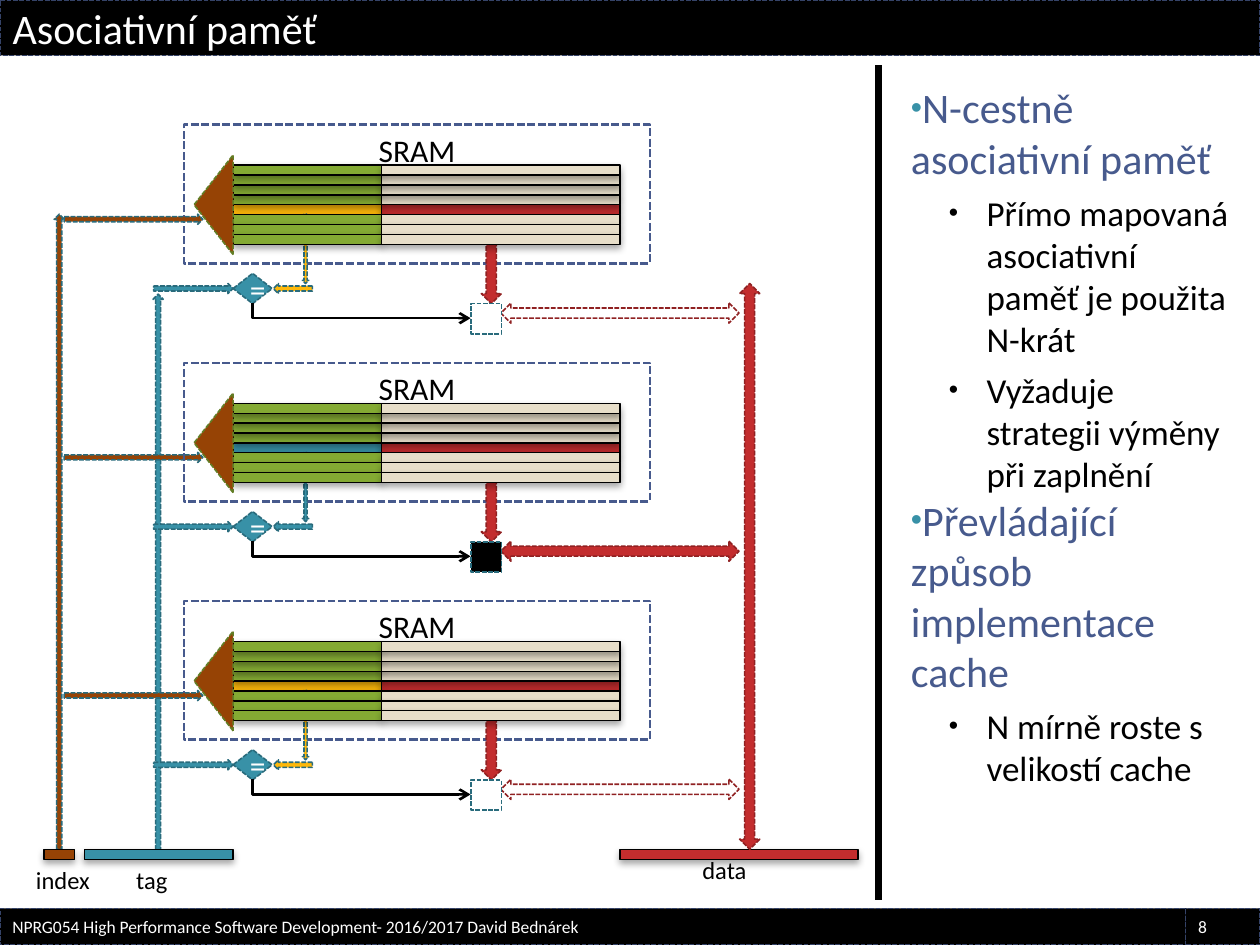
"""Build the slide on N-way associative memory."""
from lxml import etree
from pptx import Presentation
from pptx.dml.color import RGBColor
from pptx.enum import dml, shapes, text
from pptx.oxml import ns
from pptx.util import Inches, Pt

BLACK = RGBColor(0x00, 0x00, 0x00)
WHITE = RGBColor(0xFF, 0xFF, 0xFF)
TEAL = RGBColor(0x38, 0x91, 0xA7)
DARK_TEAL = RGBColor(0x29, 0x6B, 0x7C)
RED = RGBColor(0xC3, 0x2D, 0x2E)
DARK_RED = RGBColor(0x90, 0x21, 0x22)
BROWN = RGBColor(0x96, 0x43, 0x05)
GREEN = RGBColor(0x84, 0xAA, 0x33)
DARK_GREEN = RGBColor(0x62, 0x7E, 0x26)
YELLOW = RGBColor(0xFE, 0xB8, 0x0A)
CREAM = RGBColor(0xE7, 0xDE, 0xC9)
BLUE = RGBColor(0x47, 0x5A, 0x8D)
NAVY = RGBColor(0x35, 0x43, 0x68)

KIND = shapes.MSO_SHAPE
TITLE = "Asociativní paměť"
BULLETS = [
    (0, "N-cestně asociativní paměť"),
    (1, "Přímo mapovaná asociativní paměť je použita N-krát"),
    (1, "Vyžaduje strategii výměny při zaplnění"),
    (0, "Převládající způsob implementace cache"),
    (1, "N mírně roste s velikostí cache"),
]
FOOTERS = [
    ("8", (9.41, 7.21, 0.59, 0.29)),
    ("NPRG054 High Performance Software Development- 2016/2017 David Bednárek",
     (0, 7.21, 9.41, 0.29)),
]
LABELS = [
    ("tag", (0.98, 6.82, 0.45, 0.34)),
    ("data", (5.47, 6.74, 0.56, 0.34)),
    ("index", (0.18, 6.82, 0.64, 0.34)),
]
ADDRESS_FIELDS = [(0.67, 1.18, TEAL), (4.92, 1.89, RED), (0.35, 0.24, BROWN)]
MIDDLE_WAY, TOP_WAY, BOTTOM_WAY = 2.88, 0.99, 4.77
WAYS = [
    (MIDDLE_WAY, TEAL, RED, BLACK),
    (TOP_WAY, YELLOW, WHITE, WHITE),
    (BOTTOM_WAY, YELLOW, WHITE, WHITE),
]
ROW_PITCH = 0.63 / 8
HIT_ROW = 4
ROW_ORDER = [HIT_ROW, 5, 3, 2, 1, 0, 6, 7]

presentation = Presentation()
presentation.slide_width, presentation.slide_height = Inches(10), Inches(7.5)
slide = presentation.slides.add_slide(presentation.slide_layouts[1])


def place(shape, box):
    shape.left, shape.top, shape.width, shape.height = map(Inches, box)


def add_xml(parent, tag, **attributes):
    return etree.SubElement(parent, ns.qn(tag), attributes)


def paint(shape, fill, line, width=0.9, dashed=True):
    if fill is None:
        shape.fill.background()
    else:
        shape.fill.solid()
        shape.fill.fore_color.rgb = fill
    shape.line.color.rgb = line
    shape.line.width = Pt(width)
    if dashed:
        shape.line.dash_style = dml.MSO_LINE.SQUARE_DOT


def write(frame, words, size=18, color=BLACK, align=text.PP_ALIGN.CENTER,
          anchor=text.MSO_ANCHOR.MIDDLE, wrap=True):
    frame.word_wrap = wrap
    frame.auto_size = text.MSO_AUTO_SIZE.NONE
    frame.vertical_anchor = anchor
    paragraph = frame.paragraphs[0]
    paragraph.alignment = align
    run = paragraph.add_run()
    run.text = words
    run.font.name, run.font.size, run.font.color.rgb = "Calibri", Pt(size), color


def add_shape(kind, box, fill, line=DARK_TEAL, rotation=0, **outline):
    shape = slide.shapes.add_shape(kind, *map(Inches, box))
    shape.shadow.inherit = False
    shape.rotation = rotation
    paint(shape, fill, line, **outline)
    return shape


def add_cell(left, top, width, fill):
    cell = add_shape(KIND.RECTANGLE, (left, top, width, 0.08), fill, BLACK,
                     width=0.75, dashed=False)
    effects = cell.element.spPr.find(ns.qn("a:effectLst"))
    shadow = add_xml(effects, "a:outerShdw", blurRad=str(Pt(4)), dist=str(Pt(2)),
                     dir="5400000", rotWithShape="0")
    add_xml(add_xml(shadow, "a:srgbClr", val="000000"), "a:alpha", val="35000")


def add_line(kind, ends, width):
    line = slide.shapes.add_connector(kind, *map(Inches, ends))
    line.line.color.rgb = BLACK
    line.line.width = Pt(width)
    add_xml(line.element.spPr, "a:effectLst")
    return line


def add_index_arrow(way_top):
    add_shape(KIND.RIGHT_ARROW, (0.51, way_top + 0.71, 1.1, 0.08), BROWN)


def add_way(top, tag_color, output_color, gate_color):
    sram = add_shape(KIND.RECTANGLE, (1.46, top, 3.7, 1.1), None, BLUE, width=1.5)
    write(sram.text_frame, "SRAM", anchor=text.MSO_ANCHOR.TOP)
    add_shape(KIND.UP_DOWN_ARROW, (3.82, top + 0.71, 0.16, 0.71), RED, DARK_RED)
    for row in ROW_ORDER:
        row_top = top + 0.32 + row * ROW_PITCH
        add_cell(1.85, row_top, 1.18, tag_color if row == HIT_ROW else GREEN)
        add_cell(3.03, row_top, 1.89, RED if row == HIT_ROW else CREAM)
        if row == HIT_ROW:
            add_shape(KIND.RIGHT_ARROW, (2.15, top + 0.96, 0.55, 0.05), tag_color,
                      rotation=90)
    stored_tag = add_shape(KIND.RIGHT_ARROW, (2.17, top + 1.26, 0.31, 0.08), tag_color)
    stored_tag.element.spPr.xfrm.set("flipH", "1")
    comparator = add_shape(KIND.DIAMOND, (1.85, top + 1.18, 0.31, 0.24), TEAL)
    write(comparator.text_frame, "=", color=WHITE)
    add_shape(KIND.RIGHT_ARROW, (1.22, top + 1.26, 0.63, 0.08), TEAL)
    add_shape(KIND.ISOSCELES_TRIANGLE, (1.3, top + 0.48, 0.79, 0.31), BROWN,
              DARK_GREEN, rotation=270)
    add_shape(KIND.UP_DOWN_ARROW, (4.84, top + 0.55, 0.16, 1.89), output_color,
              DARK_RED, rotation=90)
    add_shape(KIND.RECTANGLE, (3.74, top + 1.42, 0.24, 0.24), gate_color)
    enable = add_line(shapes.MSO_CONNECTOR.ELBOW,
                      (2.93, top + 0.61, 2.81, top + 2.34), 1.5)
    properties = enable.element.spPr
    properties.xfrm.set("rot", "16200000")
    properties.find(ns.qn("a:prstGeom")).set("prst", "bentConnector2")
    add_xml(enable.line._get_or_add_ln(), "a:tailEnd", type="arrow")


def add_bullets(body):
    place(body, (7.13, 0.6, 2.76, 6.46))
    frame = body.text_frame
    for number, (level, words) in enumerate(BULLETS):
        paragraph = frame.add_paragraph() if number else frame.paragraphs[0]
        paragraph.level = level
        paragraph.space_before = Pt(5 * level)
        run = paragraph.add_run()
        run.text = words
        run.font.name, run.font.size = "Calibri", Pt(20 if level else 24)
        run.font.color.rgb = BLACK if level else BLUE
        properties = paragraph._p.get_or_add_pPr()
        properties.set("marL", str(Inches(0.6 * level)))
        properties.set("indent", str(Inches(-0.3 * level)))
        color = add_xml(properties, "a:buClr")
        add_xml(color, "a:srgbClr", val=str(BLACK if level else TEAL))
        add_xml(properties, "a:buSzPct", val="76000")
        add_xml(properties, "a:buFont", typeface="Arial")
        add_xml(properties, "a:buChar", char="•")
    frame.word_wrap = True
    frame.auto_size = text.MSO_AUTO_SIZE.NONE


def main():
    add_bullets(slide.placeholders[1])
    title = slide.shapes.title
    place(title, (0, 0, 10, 0.44))
    paint(title, BLACK, NAVY)
    write(title.text_frame, TITLE, size=24, color=WHITE, align=text.PP_ALIGN.LEFT)
    add_line(shapes.MSO_CONNECTOR.STRAIGHT, (6.97, 0.52, 6.97, 7.14), 4)
    for words, box in FOOTERS:
        footer = add_shape(KIND.RECTANGLE, box, BLACK, NAVY)
        write(footer.text_frame, words, size=10, color=WHITE, align=text.PP_ALIGN.LEFT)
    for words, box in LABELS:
        label = slide.shapes.add_textbox(*map(Inches, box))
        write(label.text_frame, words, size=14, anchor=text.MSO_ANCHOR.TOP, wrap=False)
    add_shape(KIND.RIGHT_ARROW, (-2.05, 4.18, 5.04, 0.08), BROWN, rotation=270)
    add_shape(KIND.RIGHT_ARROW, (-0.95, 4.5, 4.41, 0.08), TEAL, rotation=270)
    for left, width, fill in ADDRESS_FIELDS:
        add_cell(left, 6.74, width, fill)
    add_index_arrow(MIDDLE_WAY)
    add_shape(KIND.UP_DOWN_ARROW, (5.87, 2.25, 0.16, 4.49), RED, DARK_RED)
    for way in WAYS:
        add_way(*way)
    add_index_arrow(BOTTOM_WAY)
    add_index_arrow(TOP_WAY)
    presentation.save("out.pptx")


if __name__ == "__main__":
    main()
